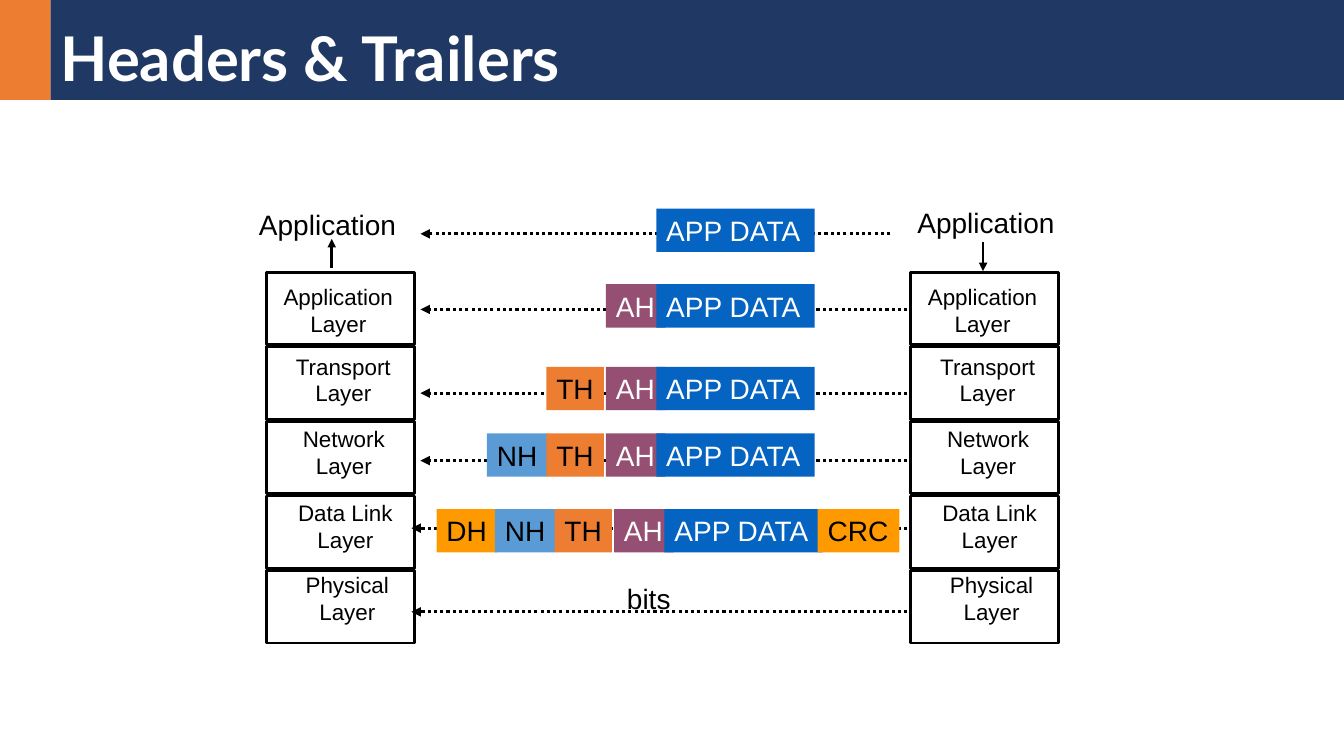
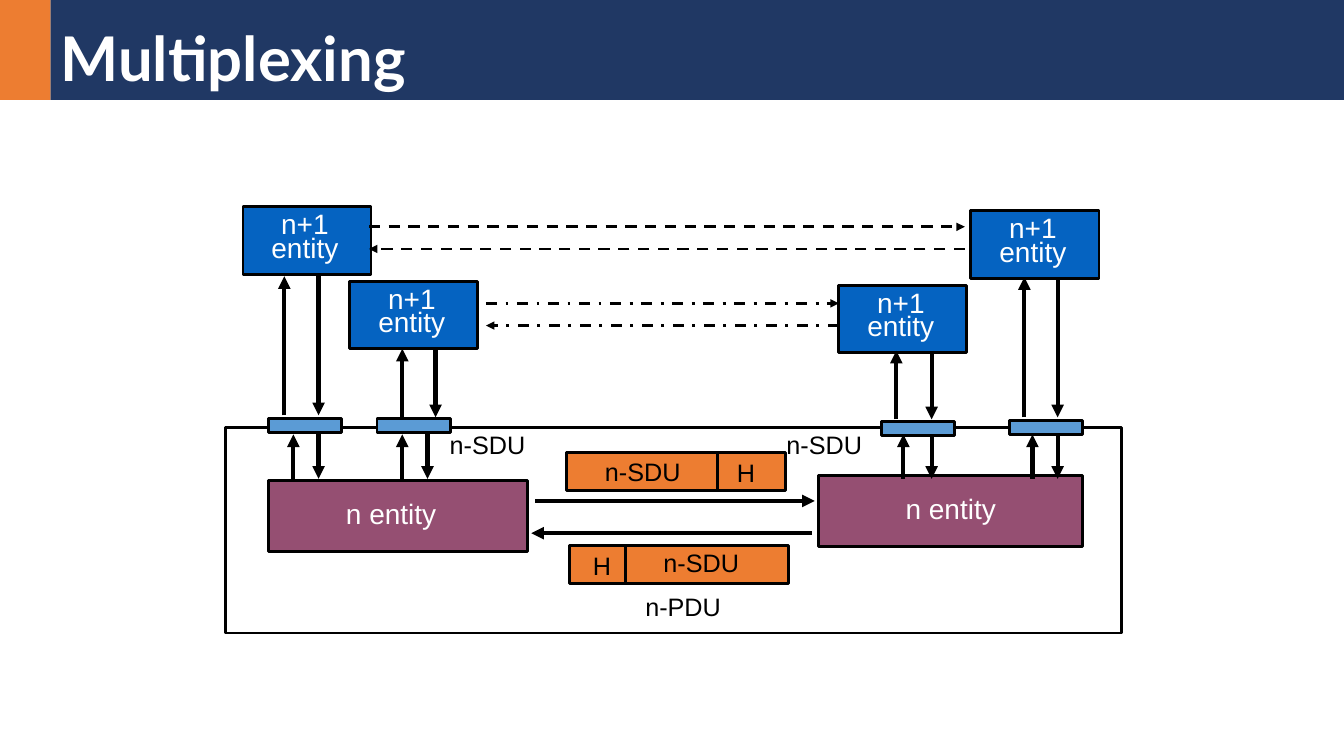
"""Build two slides on protocol layering: headers and trailers, and multiplexing."""
import pptx
import pptx.dml.color
import pptx.enum.dml
import pptx.enum.shapes
import pptx.enum.text
import pptx.oxml.ns
import pptx.util
from lxml import etree

Inches = pptx.util.Inches
Pt = pptx.util.Pt
ALIGN = pptx.enum.text.PP_ALIGN
ANCHOR = pptx.enum.text.MSO_ANCHOR
FIT = pptx.enum.text.MSO_AUTO_SIZE
DASH = pptx.enum.dml.MSO_LINE
qn = pptx.oxml.ns.qn

COLORS = {
    "navy": "203864", "orange": "ED7D31", "blue": "0563C1", "plum": "954F72",
    "sky": "5B9BD5", "amber": "FF9900", "black": "000000", "white": "FFFFFF",
}
BODY_FONT, TITLE_FONT = "Arial", "Lato"
BAND_HEIGHT, ACCENT_WIDTH, PAGE_WIDTH = 0.99, 0.5, 13.33

LAYERS = [
    ("Application", 0.07, 2.76, 1.29),
    ("Transport", 0.19, 3.45, 1.15),
    ("Network", 0.26, 4.17, 1.02),
    ("Data Link", 0.21, 4.9, 1.15),
    ("Physical", 0.29, 5.62, 1.03),
]
STACK_LEFTS = (2.64, 9.03)
STACK_TOP, LAYER_PITCH, LAYER_WIDTH, LAYER_HEIGHT = 2.7, 0.74, 1.47, 0.72
APPLICATIONS = [(2.47, 2.01, 1.65), (9, 1.99, 1.57)]
APPLICATION_ARROWS = [((3.29, 2.66), (3.29, 2.37)), ((9.75, 2.4), (9.75, 2.69))]
FLOWS = [(4.17, 8.83, 2.32), (4.17, 9, 3.07), (4.17, 9, 3.9),
         (4.17, 9, 4.57), (4.08, 9, 5.24), (4.08, 9, 6.07)]
SEGMENTS = {
    "DH": (4.25, 0.6, "amber", "black"),
    "NH": (4.83, 0.6, "sky", "black"),
    "TH": (5.42, 0.57, "orange", "black"),
    "AH": (6.01, 0.59, "plum", "white"),
    "APP DATA": (6.51, 1.57, "blue", "white"),
    "CRC": (8.03, 0.81, "amber", "black"),
}
PACKETS = [
    (2.07, 0, ["APP DATA"]),
    (2.82, 0, ["AH", "APP DATA"]),
    (3.64, 0, ["TH", "AH", "APP DATA"]),
    (4.3, 0, ["NH", "TH", "AH", "APP DATA"]),
    (5.05, 0.08, ["DH", "NH", "TH", "AH", "APP DATA", "CRC"]),
]

STATIONS = [
    {"entity": (2.41, 2.05), "port": (2.66, 4.15), "upper": (2.82, 3.16),
     "span": (2.74, 4.12), "lower": (2.91, 3.16)},
    {"entity": (3.47, 2.79), "port": (3.74, 4.15), "upper": (3.99, 4.32),
     "span": (3.46, 4.14), "lower": (3.99, 4.24)},
    {"entity": (8.32, 2.83), "port": (8.74, 4.18), "upper": (8.89, 9.24),
     "span": (3.48, 4.16), "lower": (8.96, 9.24)},
    {"entity": (9.63, 2.09), "port": (10.01, 4.17), "upper": (10.16, 10.49),
     "span": (2.75, 4.14), "lower": (10.24, 10.49)},
]
LOWER_SPAN = (4.31, 4.75)
SERVICE_ENTITIES = [(2.66, 4.77, 2.57, 0.13), (8.12, 4.72, 2.62, 0)]
DATA_UNITS = [(5.62, 4.49, 7.12), (5.65, 5.41, 6.2)]
UNIT_LABELS = [
    ("n-SDU", 4.36, 4.21, 0.95), ("n-SDU", 7.7, 4.21, 0.95),
    ("n-SDU", 5.9, 4.48, 0.95), ("H", 7.21, 4.49, 0.38),
    ("H", 5.78, 5.41, 0.38), ("n-SDU", 6.48, 5.38, 0.95),
    ("n-PDU", 6.15, 5.82, 1.25),
]
PEER_ARROWS = [
    ((3.66, 2.25), (9.57, 2.25), 2, DASH.DASH),
    ((9.57, 2.47), (3.66, 2.47), 2, DASH.DASH),
    ((4.82, 3.01), (8.32, 3.01), 2, DASH.DASH_DOT),
    ((8.32, 3.23), (4.82, 3.23), 2, DASH.DASH_DOT),
    ((5.31, 4.97), (8.08, 4.97), 3, None),
    ((8.05, 5.29), (5.27, 5.29), 3, None),
]


def rgb(name):
    return pptx.dml.color.RGBColor.from_string(COLORS[name])


def write(shape, lines, size, color="black", align=ALIGN.CENTER, spacing=None):
    frame = shape.text_frame
    frame.text = "\n".join(lines)
    for paragraph in frame.paragraphs:
        paragraph.alignment = align
        paragraph.line_spacing = spacing
        paragraph.font.name = BODY_FONT
        paragraph.font.size = Pt(size)
        paragraph.font.color.rgb = rgb(color)
    return frame


def add_box(page, left, top, width, height, fill=None, outlined=True):
    box = page.shapes.add_shape(
        pptx.enum.shapes.MSO_SHAPE.RECTANGLE,
        Inches(left), Inches(top), Inches(width), Inches(height))
    box.shadow.inherit = False
    if fill:
        box.fill.solid()
        box.fill.fore_color.rgb = rgb(fill)
    else:
        box.fill.background()
    if outlined:
        box.line.color.rgb = rgb("black")
        box.line.width = Pt(2)
    else:
        box.line.fill.background()
    return box


def add_label(page, lines, left, top, width, height, size, **style):
    label = page.shapes.add_textbox(
        Inches(left), Inches(top), Inches(width), Inches(height))
    frame = write(label, lines, size, **style)
    frame.word_wrap = False
    frame.auto_size = FIT.SHAPE_TO_FIT_TEXT


def add_line(page, start, end, width, dash=None, arrow=True):
    line = page.shapes.add_connector(
        pptx.enum.shapes.MSO_CONNECTOR.STRAIGHT,
        *(Inches(value) for value in (*start, *end)))
    line.line.color.rgb = rgb("black")
    line.line.width = Pt(width)
    if dash:
        line.line.dash_style = dash
    properties = line.element.spPr
    if arrow:
        etree.SubElement(properties.find(qn("a:ln")), qn("a:tailEnd"), type="triangle")
    etree.SubElement(properties, qn("a:effectLst"))


def add_page(deck, heading):
    page = deck.slides.add_slide(deck.slide_layouts.get_by_name("Title Only"))
    add_box(page, 0, 0, ACCENT_WIDTH, BAND_HEIGHT, "orange", outlined=False)
    title = page.shapes.title
    title.left, title.top = Inches(ACCENT_WIDTH), Inches(0)
    title.width, title.height = Inches(PAGE_WIDTH - ACCENT_WIDTH), Inches(BAND_HEIGHT)
    title.fill.solid()
    title.fill.fore_color.rgb = rgb("navy")
    frame = write(title, [heading], 44, "white", ALIGN.LEFT, 0.9)
    frame.auto_size = FIT.NONE
    frame.vertical_anchor = ANCHOR.BOTTOM
    font = frame.paragraphs[0].font
    font.name, font.bold = TITLE_FONT, True
    return page


def build_headers(deck):
    page = add_page(deck, "Headers & Trailers")
    for left, right, y in FLOWS:
        add_line(page, (right, y), (left, y), 2.25, DASH.ROUND_DOT)
    for stack_left in STACK_LEFTS:
        for index, (name, offset, top, width) in enumerate(LAYERS):
            add_box(page, stack_left, STACK_TOP + index * LAYER_PITCH,
                    LAYER_WIDTH, LAYER_HEIGHT)
            add_label(page, [name, "Layer"], stack_left + offset, top, width, 0.64, 16)
    for left, top, width in APPLICATIONS:
        add_label(page, ["Application"], left, top, width, 0.43, 20, align=ALIGN.LEFT)
    for start, end in APPLICATION_ARROWS:
        add_line(page, start, end, 2)
    for top, shift, names in PACKETS:
        for name in names:
            left, width, fill, color = SEGMENTS[name]
            segment = add_box(page, left + shift, top, width, 0.43, fill, outlined=False)
            frame = write(segment, [name], 20, color, ALIGN.LEFT)
            frame.word_wrap = False
            frame.vertical_anchor = ANCHOR.TOP
    add_label(page, ["bits"], 6.12, 5.72, 0.63, 0.43, 20, align=ALIGN.LEFT)


def build_multiplexing(deck):
    page = add_page(deck, "Multiplexing")
    add_box(page, 2.24, 4.24, 8.88, 2.04)
    for left, top, width, inset in SERVICE_ENTITIES:
        entity = add_box(page, left, top, width, 0.7, "plum")
        frame = write(entity, ["n entity"], 20, "white", spacing=0.8)
        frame.margin_left, frame.margin_right = 0, Inches(inset)
        frame.vertical_anchor = ANCHOR.MIDDLE
    for left, top, divider in DATA_UNITS:
        add_box(page, left, top, 2.17, 0.38, "orange")
        add_line(page, (divider, top), (divider, top + 0.38), 2, arrow=False)
    for station in STATIONS:
        entity = add_box(page, *station["entity"], 1.27, 0.67, "blue")
        frame = write(entity, ["n+1", "entity"], 20, "white", spacing=0.7)
        frame.vertical_anchor = ANCHOR.TOP
        frame.margin_top, frame.margin_bottom = Inches(0.09), 0
        frame.margin_left, frame.margin_right = 0, Inches(0.04)
        add_box(page, *station["port"], 0.73, 0.14, "sky")
        pairs = ((station["upper"], station["span"]), (station["lower"], LOWER_SPAN))
        for (up, down), (top, bottom) in pairs:
            add_line(page, (up, bottom), (up, top), 3)
            add_line(page, (down, top), (down, bottom), 3)
    for start, end, width, dash in PEER_ARROWS:
        add_line(page, start, end, width, dash)
    for text, left, top, width in UNIT_LABELS:
        add_label(page, [text], left, top, width, 0.4, 18)


def main():
    deck = pptx.Presentation()
    deck.slide_width, deck.slide_height = Inches(PAGE_WIDTH), Inches(7.5)
    build_headers(deck)
    build_multiplexing(deck)
    deck.save("out.pptx")


if __name__ == "__main__":
    main()
